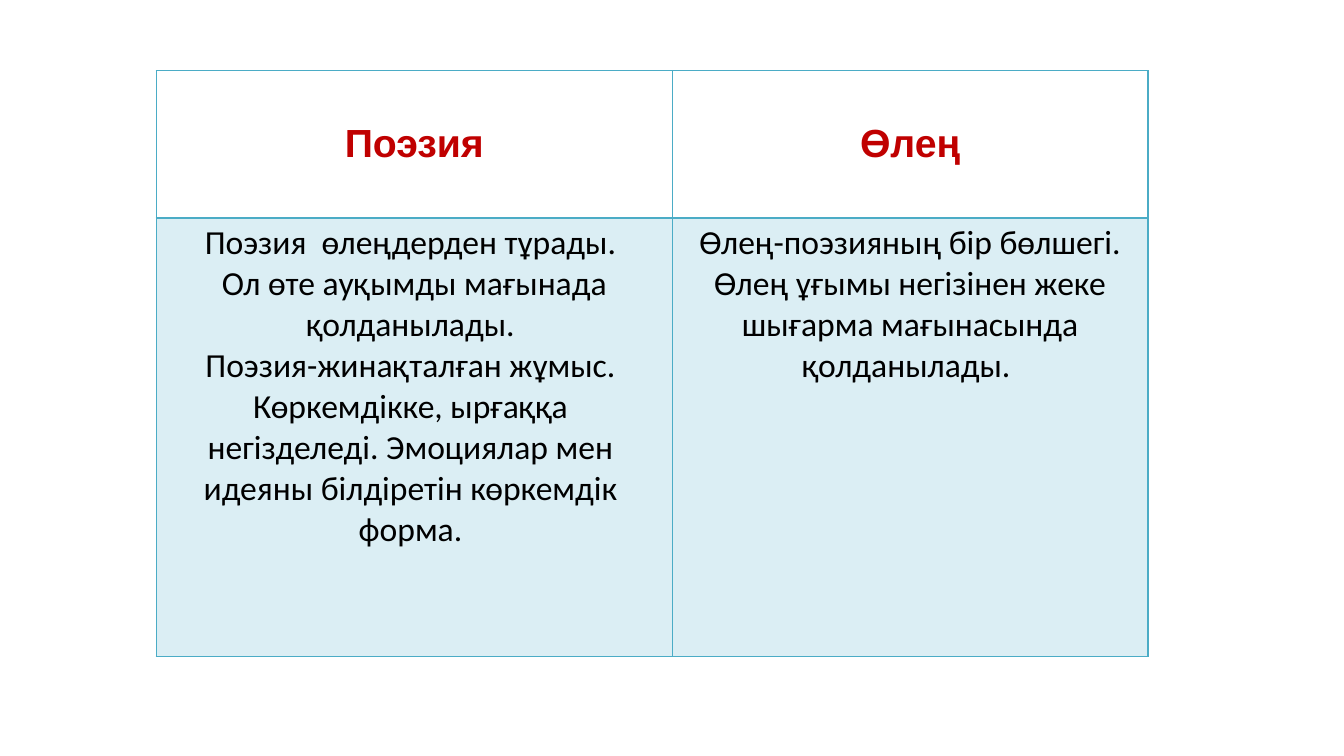
from lxml.etree import SubElement
from pptx import Presentation
from pptx.dml.color import RGBColor
from pptx.enum.text import MSO_ANCHOR, PP_ALIGN
from pptx.oxml.ns import qn
from pptx.util import Cm, Pt

HEADS = ["Поэзия", "Өлең"]
BODY = [
    [
        "Поэзия  өлеңдерден тұрады. ",
        "Ол өте ауқымды мағынада",
        "қолданылады. ",
        "Поэзия-жинақталған жұмыс.  Көркемдікке, ырғаққа ",
        "негізделеді. Эмоциялар мен ",
        "идеяны білдіретін көркемдік ",
        "форма. ",
    ],
    ["Өлең-поэзияның бір бөлшегі. Өлең ұғымы негізінен жеке "
     "шығарма мағынасында қолданылады. "],
]
ROWS = [[[head] for head in HEADS], BODY]
WIDTHS = [13, 11.99]
HEIGHTS = [3.71, 11.05]
LEFT, TOP = 3.94, 1.78
EDGE, TINT, RED, BLACK = "4BACC6", "DBEEF4", "C00000", "000000"
FONTS = [("Arial", 28, RED, True), ("Calibri", 24, BLACK, False)]
ANCHORS = [MSO_ANCHOR.MIDDLE, MSO_ANCHOR.TOP]
SIDES = [{"L": 1, "R": 1, "T": 1, "B": 2}, {"L": 1, "R": 1, "T": 2, "B": 1}]


def paint(fill, color):
    fill.solid()
    fill.fore_color.rgb = RGBColor.from_string(color)


def border(cell, sides):
    props = cell._tc.get_or_add_tcPr()
    for spot, (side, width) in enumerate(sides.items()):
        line = SubElement(props, qn(f"a:ln{side}"), w=str(Pt(width)))
        solid = SubElement(line, qn("a:solidFill"))
        SubElement(solid, qn("a:srgbClr"), val=EDGE)
        props.insert(spot, line)


def write(cell, lines, font):
    name, size, color, bold = font
    frame = cell.text_frame
    for spot, text in enumerate(lines):
        para = frame.add_paragraph() if spot else frame.paragraphs[0]
        para.alignment = PP_ALIGN.CENTER
        run = para.add_run()
        run.text = text
        run.font.name = name
        run.font.size = Pt(size)
        run.font.bold = bold
        paint(run.font.fill, color)


def main():
    """Build the slide that compares poetry and poem in a table."""
    deck = Presentation()
    deck.slide_width, deck.slide_height = Cm(33.87), Cm(19.05)
    slide = deck.slides.add_slide(deck.slide_layouts[6])
    table = slide.shapes.add_table(
        len(ROWS), len(WIDTHS), Cm(LEFT), Cm(TOP),
        Cm(sum(WIDTHS)), Cm(sum(HEIGHTS))).table
    table.horz_banding = False
    for col, width in zip(table.columns, WIDTHS):
        col.width = Cm(width)
    for r, row in enumerate(ROWS):
        table.rows[r].height = Cm(HEIGHTS[r])
        for c, lines in enumerate(row):
            cell = table.cell(r, c)
            cell.vertical_anchor = ANCHORS[r]
            if r:
                paint(cell.fill, TINT)
            else:
                cell.fill.background()
            border(cell, SIDES[r])
            write(cell, lines, FONTS[r])
    deck.save("out.pptx")


if __name__ == "__main__":
    main()
